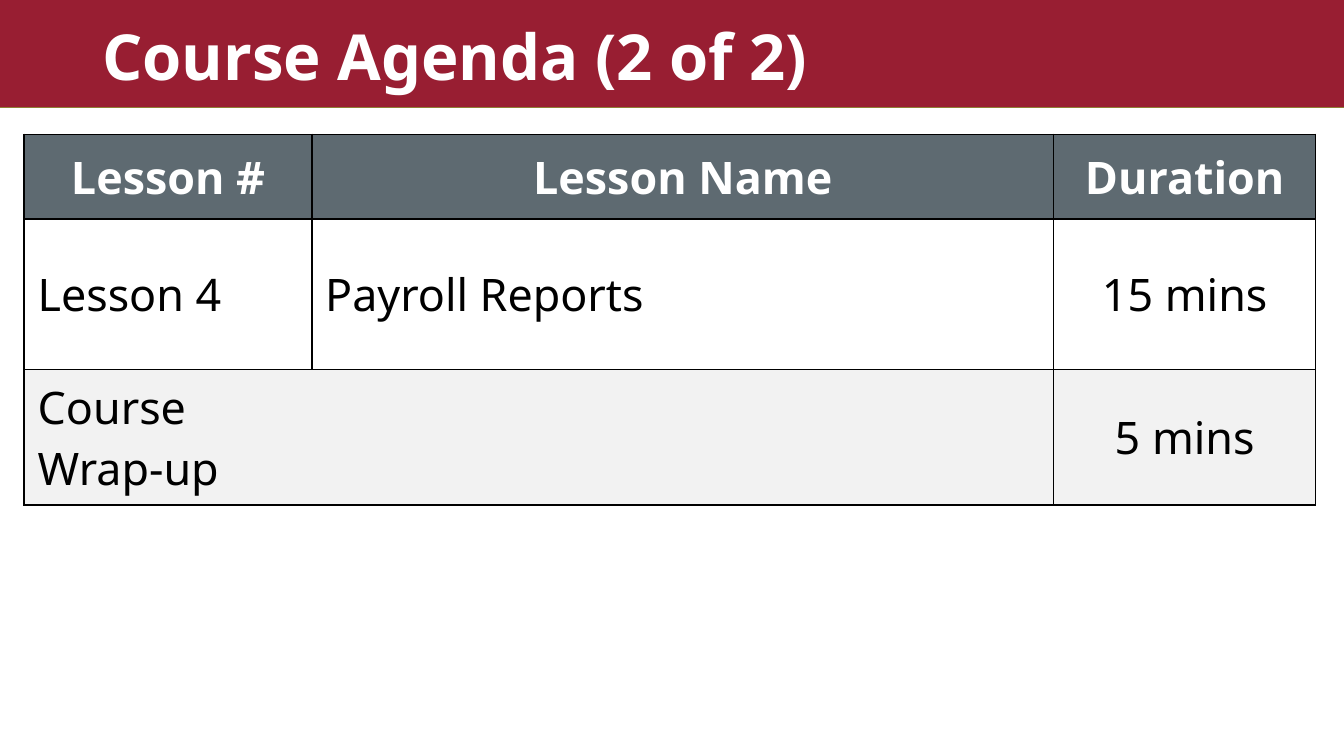
"""Build a course agenda slide with a title band and a lesson table."""
from dataclasses import dataclass

from lxml import etree
from pptx import Presentation
from pptx.dml.color import RGBColor
from pptx.enum.shapes import MSO_CONNECTOR, MSO_SHAPE
from pptx.enum.text import MSO_ANCHOR, PP_ALIGN
from pptx.oxml.ns import qn
from pptx.slide import Slide
from pptx.table import _Cell
from pptx.text.text import _Paragraph
from pptx.util import Inches, Pt

RECTANGLE = MSO_SHAPE.RECTANGLE
STRAIGHT = MSO_CONNECTOR.STRAIGHT
MIDDLE, BOTTOM = MSO_ANCHOR.MIDDLE, MSO_ANCHOR.BOTTOM
LEFT, CENTER = PP_ALIGN.LEFT, PP_ALIGN.CENTER

WIDTH = Inches(10)
HEIGHT = WIDTH * 9 // 16
BAND_HEIGHT = Inches(0.8)
TABLE_LEFT, TABLE_TOP = Inches(0.18), Inches(1)
COLUMNS = [Inches(size) for size in (2.14, 5.52, 1.95)]
ROWS = [Inches(size) for size in (0.63, 1.12, 1.01)]


@dataclass(frozen=True)
class Theme:
    """Colours, font and type sizes of the slide."""

    band: str = "981E32"
    rule: str = "8F7E35"
    header: str = "5E6A71"
    shade: str = "F2F2F2"
    light: str = "FFFFFF"
    dark: str = "000000"
    font: str = "Noto Sans"
    title_size: int = 34
    table_size: int = 24
    line_width: int = 1


@dataclass(frozen=True)
class AgendaCell:
    """Text and look of one table cell; open_sides lists unruled sides."""

    text: str
    align: PP_ALIGN = LEFT
    fill: str = ""
    header: bool = False
    open_sides: str = ""


THEME = Theme()
AGENDA = [
    [AgendaCell(text, CENTER, THEME.header, header=True)
     for text in ("Lesson #", "Lesson Name", "Duration")],
    [AgendaCell("Lesson 4"), AgendaCell("Payroll Reports"), AgendaCell("15 mins", CENTER)],
    [AgendaCell("Course Wrap-up", fill=THEME.shade, open_sides="R"),
     AgendaCell("", fill=THEME.shade, open_sides="L"),
     AgendaCell("5 mins", CENTER, THEME.shade)],
]


def set_font(paragraph: _Paragraph, size: int, color: str, bold: bool) -> None:
    """Apply the theme font to a paragraph."""
    font = paragraph.font
    font.name, font.size, font.bold = THEME.font, Pt(size), bold
    font.color.rgb = RGBColor.from_string(color)


def draw_band(slide: Slide) -> None:
    """Draw the title band and the rule under it."""
    band = slide.shapes.add_shape(RECTANGLE, 0, 0, WIDTH, BAND_HEIGHT)
    band.shadow.inherit = False
    band.fill.solid()
    band.fill.fore_color.rgb = RGBColor.from_string(THEME.band)
    band.line.fill.background()
    rule = slide.shapes.add_connector(STRAIGHT, 0, BAND_HEIGHT, WIDTH, BAND_HEIGHT)
    rule.line.color.rgb = RGBColor.from_string(THEME.rule)
    rule.line.width = Pt(THEME.line_width)
    etree.SubElement(rule.element.spPr, qn("a:effectLst"))


def draw_title(slide: Slide, text: str) -> None:
    """Write the title at the bottom of the band."""
    box = slide.shapes.add_textbox(Inches(0.26), Inches(0.13), Inches(9.67), Inches(0.62))
    frame = box.text_frame
    frame.word_wrap, frame.vertical_anchor = True, BOTTOM
    frame.margin_left = frame.margin_right = Inches(0.5)
    para = frame.paragraphs[0]
    para.text, para.line_spacing = text, 0.9
    set_font(para, THEME.title_size, THEME.light, True)


def draw_borders(cell: _Cell, open_sides: str) -> None:
    """Rule the sides of a cell, leaving the open ones blank."""
    properties = cell._tc.get_or_add_tcPr()
    for side in "LRTB":
        line = etree.SubElement(properties, qn(f"a:ln{side}"), w=str(Pt(THEME.line_width)))
        if side in open_sides:
            etree.SubElement(line, qn("a:noFill"))
        else:
            fill = etree.SubElement(line, qn("a:solidFill"))
            etree.SubElement(fill, qn("a:srgbClr"), val=THEME.dark)


def fill_cell(cell: _Cell, content: AgendaCell) -> None:
    """Write and style one table cell."""
    draw_borders(cell, content.open_sides)
    if content.fill:
        cell.fill.solid()
        cell.fill.fore_color.rgb = RGBColor.from_string(content.fill)
    else:
        cell.fill.background()
    cell.vertical_anchor = MIDDLE
    para = cell.text_frame.paragraphs[0]
    para.text, para.alignment = content.text, content.align
    color = THEME.light if content.header else THEME.dark
    set_font(para, THEME.table_size, color, content.header)


def draw_agenda(slide: Slide) -> None:
    """Draw the lesson table."""
    table = slide.shapes.add_table(
        len(ROWS), len(COLUMNS), TABLE_LEFT, TABLE_TOP, sum(COLUMNS), sum(ROWS)
    ).table
    table.first_row = table.horz_banding = False
    for column, width in zip(table.columns, COLUMNS):
        column.width = width
    for row, height, contents in zip(table.rows, ROWS, AGENDA):
        row.height = height
        for cell, content in zip(row.cells, contents):
            fill_cell(cell, content)


def main() -> None:
    """Build and save the deck."""
    deck = Presentation()
    deck.slide_width, deck.slide_height = WIDTH, HEIGHT
    slide = deck.slides.add_slide(deck.slide_layouts[6])
    draw_band(slide)
    draw_title(slide, "Course Agenda (2 of 2)")
    draw_agenda(slide)
    deck.save("out.pptx")


if __name__ == "__main__":
    main()
